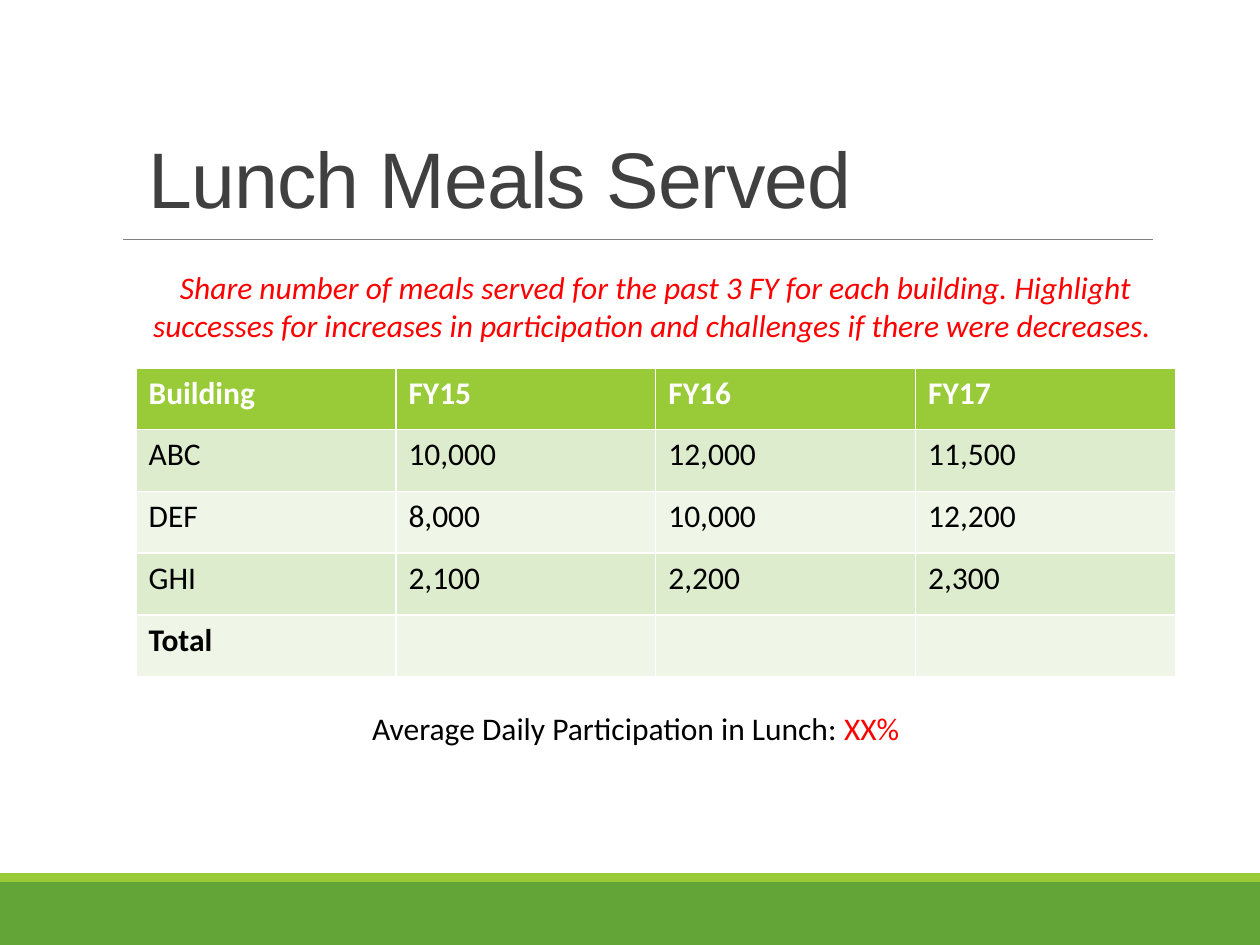
from lxml import etree
from pptx import Presentation
from pptx.dml.color import RGBColor
from pptx.enum.shapes import MSO_CONNECTOR, MSO_SHAPE
from pptx.enum.text import MSO_ANCHOR, MSO_AUTO_SIZE, PP_ALIGN
from pptx.oxml.ns import qn
from pptx.util import Inches, Pt

RECTANGLE = MSO_SHAPE.RECTANGLE
STRAIGHT = MSO_CONNECTOR.STRAIGHT
BOTTOM = MSO_ANCHOR.BOTTOM
NO_FIT, GROW = MSO_AUTO_SIZE.NONE, MSO_AUTO_SIZE.SHAPE_TO_FIT_TEXT
LEFT, CENTER = PP_ALIGN.LEFT, PP_ALIGN.CENTER

COLORS = {
    "green": "63A537", "lime": "99CB38", "rule": "808080", "title": "404040",
    "red": "FF0000", "black": "000000", "white": "FFFFFF",
    "dark band": "DEECCE", "light band": "EFF6E8",
}


def color(name):
    return RGBColor.from_string(COLORS[name])


def format_span(span, name, size=18, font="Calibri", bold=False, italic=False):
    span.font.name = font
    span.font.size = Pt(size)
    span.font.bold = bold
    span.font.italic = italic
    span.font.color.rgb = color(name)


deck = Presentation()
deck.slide_width, deck.slide_height = Inches(10), Inches(7.5)
page = deck.slides.add_slide(deck.slide_layouts[5])

for top, height, name in [(7, 0.5, "green"), (6.93, 0.07, "lime")]:
    bar = page.shapes.add_shape(RECTANGLE, 0, Inches(top), Inches(10), Inches(height))
    bar.shadow.inherit = False
    bar.fill.solid()
    bar.fill.fore_color.rgb = color(name)
    bar.line.fill.background()

rule = page.shapes.add_connector(STRAIGHT, Inches(0.98), Inches(1.9), Inches(9.15), Inches(1.9))
rule.line.color.rgb = color("rule")
rule.line.width = Pt(0.5)
etree.SubElement(rule._element.spPr, qn("a:effectLst"))

title = page.shapes.title
title.left, title.top, title.width, title.height = map(Inches, (1.08, 0.58, 7.67, 1.25))
title.text_frame.text = "Lunch Meals Served"
title.text_frame.auto_size = NO_FIT
title.text_frame.vertical_anchor = BOTTOM
para = title.text_frame.paragraphs[0]
para.alignment = LEFT
para.line_spacing = 0.85
format_span(para.runs[0], "title", 45, "Arial")
para.runs[0].font._element.set("spc", "-50")

captions = [
    ((0.83, 2.08, 8.75, 0.71), True, [
        ("Share number of meals served for the past 3 FY for each building. Highlight "
         "successes for increases in participation and challenges if there were decreases. ", "red")]),
    ((1.17, 5.58, 7.75, 0.4), False, [
        ("Average Daily Participation in Lunch: ", "black"), ("XX%", "red")]),
]
for place, italic, parts in captions:
    box = page.shapes.add_textbox(*map(Inches, place))
    box.text_frame.word_wrap = True
    box.text_frame.auto_size = GROW
    para = box.text_frame.paragraphs[0]
    para.alignment = CENTER
    for text, name in parts:
        span = para.add_run()
        span.text = text
        format_span(span, name, italic=italic)

meals = [
    ["Building", "FY15", "FY16", "FY17"],
    ["ABC", "10,000", "12,000", "11,500"],
    ["DEF", "8,000", "10,000", "12,200"],
    ["GHI", "2,100", "2,200", "2,300"],
    ["Total", "", "", ""],
]
table = page.shapes.add_table(
    len(meals), len(meals[0]), Inches(1.08), Inches(2.92), Inches(8.25), Inches(2.45)).table
for row, values in enumerate(meals):
    header = row == 0
    band = "lime" if header else "dark band" if row % 2 else "light band"
    for column, value in enumerate(values):
        cell = table.cell(row, column)
        cell.fill.solid()
        cell.fill.fore_color.rgb = color(band)
        if value:
            cell.text_frame.text = value
            format_span(cell.text_frame.paragraphs[0].runs[0],
                        "white" if header else "black", bold=header or value == "Total")

deck.save("out.pptx")
